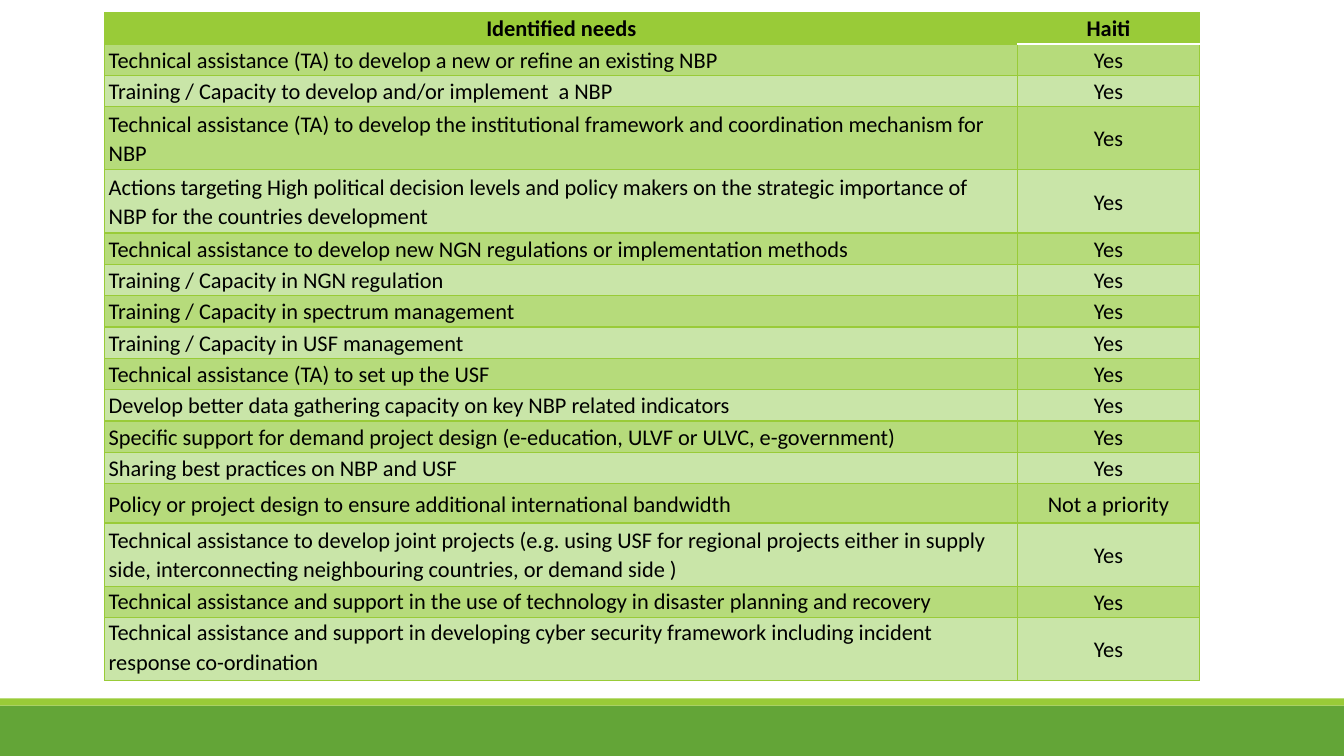
import dataclasses

import lxml.etree
import pptx
import pptx.dml.color
import pptx.enum.shapes
import pptx.enum.text
import pptx.oxml.ns
import pptx.slide
import pptx.table
import pptx.util

Cm = pptx.util.Cm
Pt = pptx.util.Pt
ALIGN = pptx.enum.text.PP_ALIGN
ANCHOR = pptx.enum.text.MSO_ANCHOR

COLORS = {
    "lime": "99CB38",
    "green": "63A537",
    "odd_row": "B6DB7B",
    "even_row": "C9E5A8",
    "line": "FFFFFF",
    "text": "000000",
}
SINGLE, TALL, DOUBLE = 0.79, 0.99, 1.59
CELL_FORMAT = {
    "margin_left": Cm(0.1),
    "margin_right": Cm(0.1),
    "margin_top": Cm(0),
    "margin_bottom": Cm(0),
}
FONT_FORMAT = {"name": "Calibri", "size": Pt(16)}


@dataclasses.dataclass(frozen=True)
class Band:
    top: float
    height: float
    color: str


@dataclasses.dataclass(frozen=True)
class Need:
    text: str
    answer: str = "Yes"
    height: float = SINGLE
    anchor: ANCHOR = ANCHOR.MIDDLE


BANDS = [Band(17.78, 1.27, "green"), Band(17.6, 0.18, "lime")]
NEEDS = [
    Need("Identified needs", "Haiti"),
    Need("Technical assistance (TA) to develop a new or refine an existing NBP"),
    Need("Training / Capacity to develop and/or implement  a NBP"),
    Need("Technical assistance (TA) to develop the institutional framework and "
         "coordination mechanism for NBP", height=DOUBLE),
    Need("Actions targeting High political decision levels and policy makers on the "
         "strategic importance of  NBP for the countries development", height=DOUBLE),
    Need("Technical assistance to develop new NGN regulations or implementation methods"),
    Need("Training / Capacity in NGN regulation"),
    Need("Training / Capacity in spectrum management"),
    Need("Training / Capacity in USF management"),
    Need("Technical assistance (TA) to set up the USF"),
    Need("Develop better data gathering capacity on key NBP related indicators"),
    Need("Specific support for demand project design (e-education, ULVF or ULVC, "
         "e-government)"),
    Need("Sharing best practices on NBP and USF"),
    Need("Policy or project design to ensure additional international bandwidth",
         "Not a priority", TALL),
    Need("Technical assistance to develop joint projects (e.g. using USF for regional "
         "projects either in supply side, interconnecting neighbouring countries, or "
         "demand side )", height=DOUBLE),
    Need("Technical assistance and support in the use of technology in disaster "
         "planning and recovery", anchor=ANCHOR.TOP),
    Need("Technical assistance and support in developing cyber security framework "
         "including incident response co-ordination", height=DOUBLE, anchor=ANCHOR.TOP),
]
COLUMN_WIDTHS = [23.01, 4.57]


def rgb(name: str) -> pptx.dml.color.RGBColor:
    return pptx.dml.color.RGBColor.from_string(COLORS[name])


def add_band(slide: pptx.slide.Slide, band: Band, width: int) -> None:
    sp = slide.shapes.add_shape(
        pptx.enum.shapes.MSO_SHAPE.RECTANGLE, 0, Cm(band.top), width, Cm(band.height))
    sp.shadow.inherit = False
    sp.fill.solid()
    sp.fill.fore_color.rgb = rgb(band.color)
    sp.line.fill.background()


def set_border(cell: pptx.table._Cell, side: str, color: str, width: float) -> None:
    qn = pptx.oxml.ns.qn
    ln = lxml.etree.SubElement(
        cell._tc.get_or_add_tcPr(), qn(f"a:ln{side}"), w=str(Pt(width)))
    fill = lxml.etree.SubElement(ln, qn("a:solidFill"))
    lxml.etree.SubElement(fill, qn("a:srgbClr"), val=COLORS[color])


def fill_cell(cell: pptx.table._Cell, text: str, row: int, col: int,
              anchor: ANCHOR) -> None:
    header = row == 0
    for name, value in CELL_FORMAT.items():
        setattr(cell, name, value)
    cell.vertical_anchor = anchor
    for side in "LRTB":
        rule = col == 1 and (row, side) in ((0, "B"), (1, "T"))
        set_border(cell, side, "line" if rule else "lime", 1.25 if rule else 1)
    cell.fill.solid()
    cell.fill.fore_color.rgb = rgb(
        "lime" if header else "odd_row" if row % 2 else "even_row")
    p = cell.text_frame.paragraphs[0]
    p.alignment = ALIGN.CENTER if header or col == 1 else ALIGN.LEFT
    p.line_spacing = 1.07
    r = p.add_run()
    r.text = text
    for name, value in {**FONT_FORMAT, "bold": header}.items():
        setattr(r.font, name, value)
    r.font.color.rgb = rgb("text")


def add_needs_table(slide: pptx.slide.Slide, needs: list[Need]) -> None:
    table = slide.shapes.add_table(
        len(needs), len(COLUMN_WIDTHS), Cm(2.64), Cm(0.32),
        Cm(sum(COLUMN_WIDTHS)), Cm(sum(need.height for need in needs))).table
    for column, width in zip(table.columns, COLUMN_WIDTHS):
        column.width = Cm(width)
    for row, need in enumerate(needs):
        table.rows[row].height = Cm(need.height)
        fill_cell(table.cell(row, 0), need.text, row, 0, need.anchor)
        fill_cell(table.cell(row, 1), need.answer, row, 1, ANCHOR.MIDDLE)


def main() -> None:
    prs = pptx.Presentation()
    prs.slide_width, prs.slide_height = Cm(33.87), Cm(19.05)
    s = prs.slides.add_slide(prs.slide_layouts[6])
    for band in BANDS:
        add_band(s, band, prs.slide_width)
    add_needs_table(s, NEEDS)
    prs.save("out.pptx")


if __name__ == "__main__":
    main()
